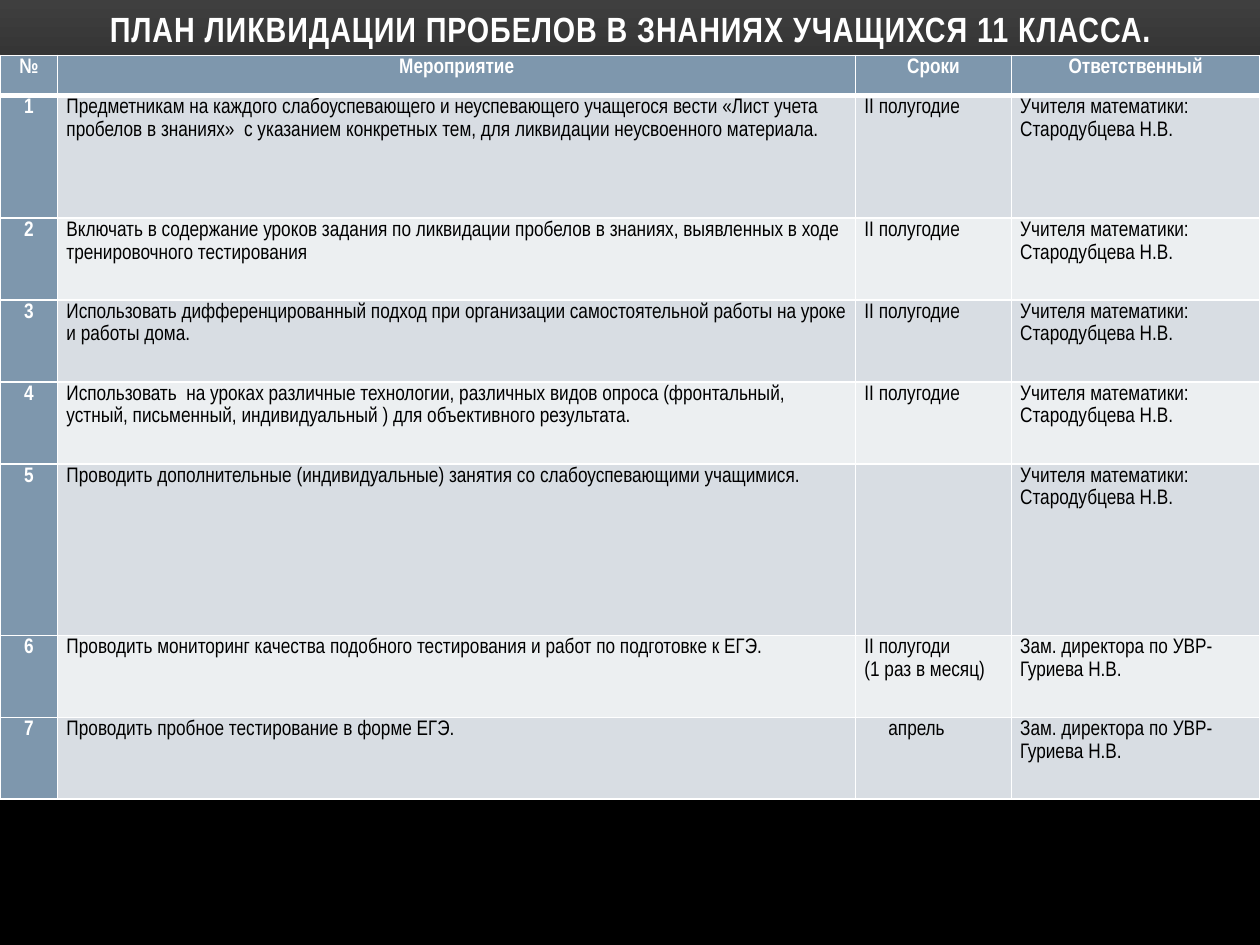
"""Builds a slide with the plan for closing knowledge gaps in grade 11."""
from lxml import etree
from pptx import Presentation
from pptx.dml.color import RGBColor
from pptx.enum.text import MSO_ANCHOR, PP_ALIGN
from pptx.oxml.ns import qn
from pptx.util import Pt

CENTER, LEFT = PP_ALIGN.CENTER, PP_ALIGN.LEFT
BOTTOM = MSO_ANCHOR.BOTTOM
FONT = "Arial Narrow"
WHITE, BLACK, HEAD = "FFFFFF", "000000", "7E97AD"
BANDS = ["ECEFF1", "D8DDE3"]
TERM = "II полугодие"
TEACHER = "Учителя математики: Стародубцева Н.В."
DEPUTY = "Зам. директора по УВР-Гуриева Н.В."
COLS = [33, 456, 89, 142]
HEIGHTS = [23, 70, 46.8, 46.8, 46.8, 98, 46.8, 46.8]
ROWS = [
    ("№", "Мероприятие", "Сроки", "Ответственный"),
    ("1", "Предметникам на каждого слабоуспевающего и неуспевающего учащегося вести «Лист учета "
     "пробелов в знаниях»  с указанием конкретных тем, для ликвидации неусвоенного материала.",
     TERM, TEACHER),
    ("2", "Включать в содержание уроков задания по ликвидации пробелов в знаниях, выявленных в ходе "
     "тренировочного тестирования", TERM, TEACHER),
    ("3", "Использовать дифференцированный подход при организации самостоятельной работы на уроке "
     "и работы дома.", TERM, TEACHER),
    ("4", "Использовать  на уроках различные технологии, различных видов опроса (фронтальный, устный, "
     "письменный, индивидуальный ) для объективного результата.", TERM, TEACHER),
    ("5", "Проводить дополнительные (индивидуальные) занятия со слабоуспевающими учащимися.",
     "", TEACHER),
    ("6", "Проводить мониторинг качества подобного тестирования и работ по подготовке к ЕГЭ.",
     "II полугоди\n(1 раз в месяц)", DEPUTY),
    ("7", "Проводить пробное тестирование в форме ЕГЭ.", "апрель", DEPUTY),
]


def rgb(value):
    return RGBColor.from_string(value)


def set_font(p, size, color, bold):
    p.font.name = FONT
    p.font.size = Pt(size)
    p.font.bold = bold
    p.font.color.rgb = rgb(color)


prs = Presentation()
prs.slide_width, prs.slide_height = Pt(720), Pt(540)
s = prs.slides.add_slide(prs.slide_layouts[6])

bg = s.background.fill
bg.gradient()
bg.gradient_angle = 270
for stop, (position, color) in zip(bg.gradient_stops, [(0, "3F3F3F"), (0.31, BLACK)]):
    stop.position = position
    stop.color.rgb = rgb(color)

tf = s.shapes.add_textbox(Pt(0.7), Pt(0), Pt(719.3), Pt(31.7)).text_frame
tf.word_wrap = True
tf.vertical_anchor = BOTTOM
p = tf.paragraphs[0]
p.alignment = CENTER
r = p.add_run()
r.text = "ПЛАН ЛИКВИДАЦИИ ПРОБЕЛОВ В ЗНАНИЯХ УЧАЩИХСЯ 11 КЛАССА."
set_font(p, 20, WHITE, True)
r.font._element.set("spc", "50")

table = s.shapes.add_table(len(ROWS), len(COLS), Pt(0), Pt(31.7), Pt(720), Pt(sum(HEIGHTS))).table
for column, width in zip(table.columns, COLS):
    column.width = Pt(width)
for i, (row, height) in enumerate(zip(ROWS, HEIGHTS)):
    table.rows[i].height = Pt(height)
    for j, text in enumerate(row):
        cell = table.cell(i, j)
        heading = i == 0 or j == 0
        cell.margin_left = Pt(18.7 if text == "апрель" else 5)
        cell.margin_right = Pt(5)
        cell.margin_top = cell.margin_bottom = Pt(0)
        cell.text = text
        for p in cell.text_frame.paragraphs:
            p.alignment = CENTER if heading else LEFT
            p.line_spacing = 1.15
            set_font(p, 12, WHITE if heading else BLACK, heading)
        tcPr = cell._tc.get_or_add_tcPr()
        thick = {0: "lnB", 1: "lnT"}.get(i)
        for side in ("lnL", "lnR", "lnT", "lnB"):
            ln = etree.SubElement(tcPr, qn("a:" + side), w=str(Pt(3 if side == thick else 1)))
            fill = etree.SubElement(ln, qn("a:solidFill"))
            etree.SubElement(fill, qn("a:srgbClr"), val=WHITE)
        cell.fill.solid()
        cell.fill.fore_color.rgb = rgb(HEAD if heading else BANDS[i % 2])

prs.save("out.pptx")
